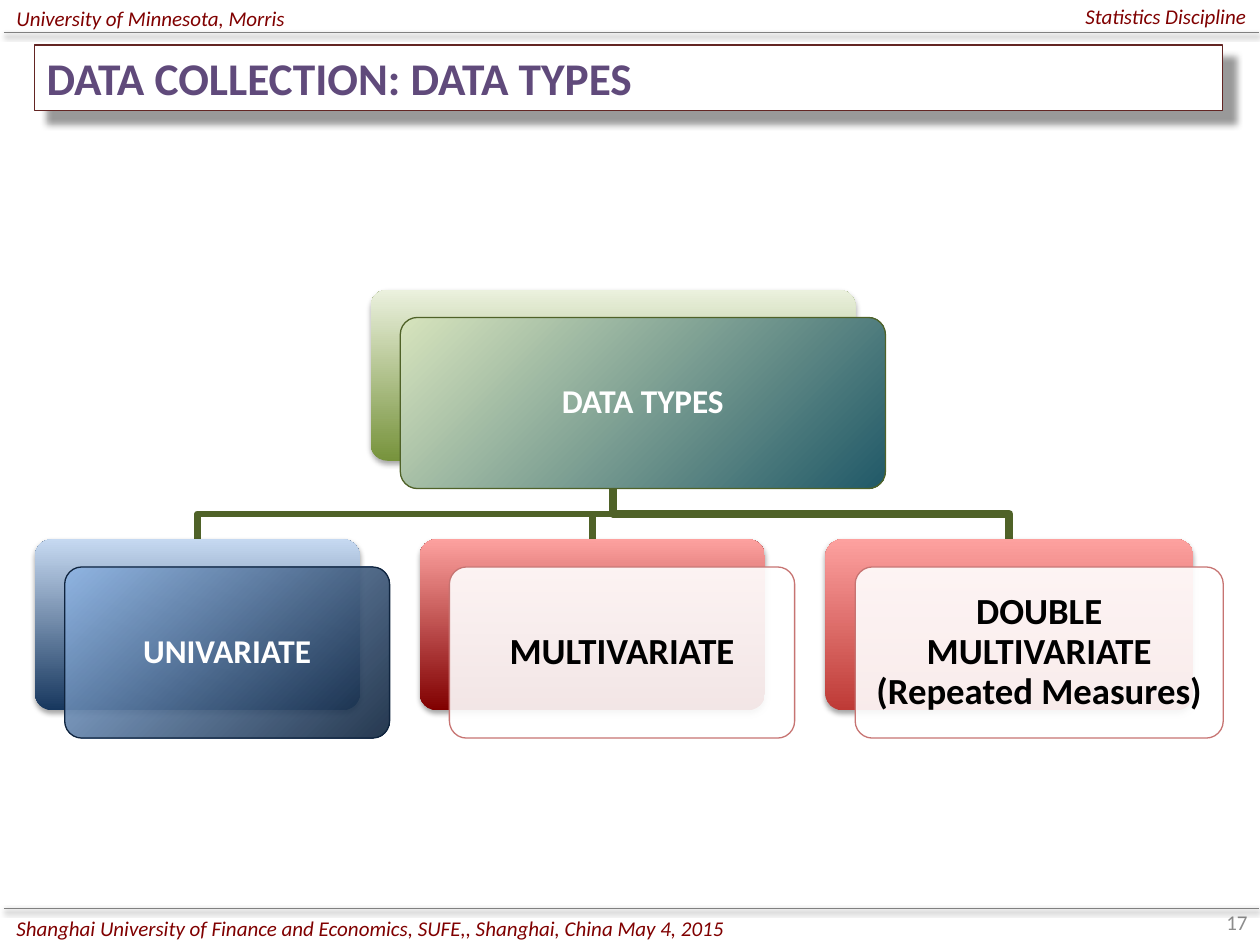
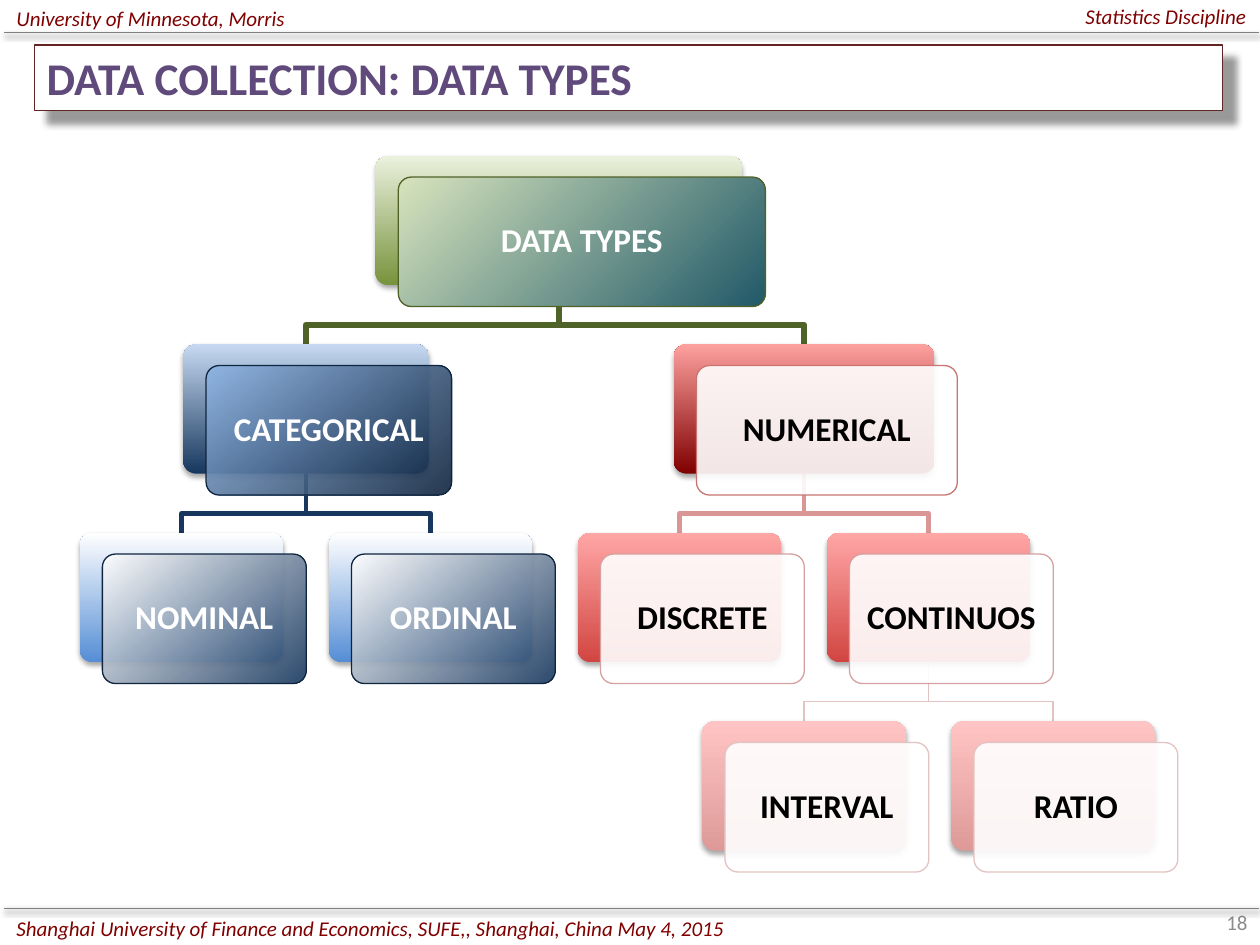
"""Builds two slides of data type trees that share one header, title and footer."""
from dataclasses import dataclass, field

import pptx
import pptx.dml.color
import pptx.enum.shapes
import pptx.enum.text
import pptx.oxml
import pptx.oxml.ns
import pptx.util

Cm = pptx.util.Cm
Pt = pptx.util.Pt
LEFT = pptx.enum.text.PP_ALIGN.LEFT
RIGHT = pptx.enum.text.PP_ALIGN.RIGHT
CENTER = pptx.enum.text.PP_ALIGN.CENTER
SHAPES = pptx.enum.shapes.MSO_SHAPE


@dataclass(frozen=True)
class Tone:
    back: tuple
    front: tuple
    edge: str
    text: str
    opacity: int = 90


@dataclass(frozen=True)
class Branch:
    color: str
    weight: float


@dataclass(frozen=True)
class Shadow:
    opacity: int
    blur: float
    distance: float
    angle: int


@dataclass(frozen=True)
class Theme:
    font: str = "Calibri"
    white: str = "FFFFFF"
    black: str = "000000"
    rule: str = "808080"
    maroon: str = "800000"
    title: str = "604A7B"
    title_edge: str = "632523"
    number: str = "8C8C8C"
    small: float = 12
    heading: float = 25.9
    label: float = 19
    large_label: float = 21
    hairline: float = 0.75
    rule_shadow: Shadow = Shadow(38, 3.1, 1.6, 90)
    card_shadow: Shadow = Shadow(35, 3.1, 1.8, 90)
    title_shadow: Shadow = Shadow(40, 4, 10, 45)
    green: Tone = Tone(("77933C", "EBF1DE"), ("215968", "D7E4BD"), "4F6228", "FFFFFF", 100)
    navy: Tone = Tone(("17375E", "C6D9F1"), ("0F243E", "8EB4E3"), "0F243E", "FFFFFF")
    sky: Tone = Tone(("558ED5", "FFFFFF"), ("17375E", "FFFFFF"), "0F243E", "FFFFFF")
    crimson: Tone = Tone(("800000", "FDA19F"), ("FFFFFF",), "C77472", "000000")
    red: Tone = Tone(("BE3A36", "FDA19F"), ("FFFFFF",), "C77472", "000000")
    coral: Tone = Tone(("D14541", "FFA7A6"), ("FFFFFF",), "D5A1A0", "000000")
    rose: Tone = Tone(("DD9A99", "FFC4C3"), ("FFFFFF",), "E2C2C2", "000000")
    green_branch: Branch = Branch("4F6228", 3.75)
    heavy_branch: Branch = Branch("4F6228", 4.5)
    navy_branch: Branch = Branch("17375E", 2.5)
    rose_branch: Branch = Branch("D99694", 2.5)
    pale_branch: Branch = Branch("E2C2C2", 0.75)


THEME = Theme()


@dataclass
class Node:
    label: str
    center: float
    width: float
    tone: Tone
    branch: Branch = None
    size: float = THEME.label
    children: list = field(default_factory=list)


@dataclass(frozen=True)
class Layout:
    top: float
    pitch: float
    height: float
    shift_x: float
    shift_y: float
    bend: float

    def level_top(self, level):
        return self.top + level * self.pitch


def rgb(color):
    return pptx.dml.color.RGBColor.from_string(color)


def drawing(tag, content="", **attributes):
    pairs = " ".join(f'{name}="{value}"' for name, value in attributes.items())
    namespace = pptx.oxml.ns.nsdecls("a")
    return pptx.oxml.parse_xml(f"<a:{tag} {namespace} {pairs}>{content}</a:{tag}>")


class Deck:
    def __init__(self, theme):
        self.theme = theme
        self.presentation = pptx.Presentation()
        self.presentation.slide_width = Cm(25.4)
        self.presentation.slide_height = Cm(19.05)
        self.slide = None

    def start_slide(self, number):
        theme = self.theme
        self.slide = self.presentation.slides.add_slide(self.presentation.slide_layouts[6])
        self.note(str(number), 19.48, 18.08, 5.92, 1.02, RIGHT, theme.number, italic=False)
        self.note("University of Minnesota, Morris", 0.08, -0.15, 11.63, 1.02)
        self.note("Statistics Discipline", 13.74, -0.18, 11.63, 1.02, RIGHT)
        for height in (18.31, 0.66):
            self.rule(height)

    def finish_slide(self, title):
        self.title(title)
        self.note("Shanghai University of Finance and Economics, SUFE,, "
                  "Shanghai, China May 4, 2015", 0.08, 18.31, 14.78, 0.79)

    def set_text(self, shape, text, size, color, align, bold=False, italic=False):
        frame = shape.text_frame
        frame.word_wrap = True
        frame.vertical_anchor = pptx.enum.text.MSO_ANCHOR.MIDDLE
        paragraph = frame.paragraphs[0]
        paragraph.text = text
        paragraph.alignment = align
        font = paragraph.font
        font.name, font.size = self.theme.font, Pt(size)
        font.bold, font.italic = bold, italic
        font.color.rgb = rgb(color)
        return paragraph

    def note(self, text, left, top, width, height, align=LEFT, color=None, italic=True):
        box = self.slide.shapes.add_textbox(Cm(left), Cm(top), Cm(width), Cm(height))
        self.set_text(box, text, self.theme.small, color or self.theme.maroon, align, italic=italic)

    def cast(self, properties, shadow):
        tint = f'<a:srgbClr val="{self.theme.black}"><a:alpha val="{shadow.opacity * 1000}"/></a:srgbClr>'
        effects = drawing("effectLst")
        effects.append(drawing("outerShdw", tint, blurRad=Pt(shadow.blur), dist=Pt(shadow.distance),
                               dir=shadow.angle * 60000, algn="tl", rotWithShape=0))
        properties.append(effects)

    def rule(self, height):
        line = self.slide.shapes.add_connector(
            pptx.enum.shapes.MSO_CONNECTOR.STRAIGHT, Cm(0.08), Cm(height), Cm(25.37), Cm(height))
        line.line.color.rgb = rgb(self.theme.rule)
        line.line.width = Pt(self.theme.hairline)
        self.cast(line.element.spPr, self.theme.rule_shadow)

    def panel(self, kind, left, top, width, height, edge=None, shadow=None):
        shape = self.slide.shapes.add_shape(kind, Cm(left), Cm(top), Cm(width), Cm(height))
        shape.fill.solid()
        shape.fill.fore_color.rgb = rgb(self.theme.white)
        if edge:
            shape.line.color.rgb = rgb(edge)
            shape.line.width = Pt(self.theme.hairline)
        else:
            shape.line.fill.background()
        if shadow:
            self.cast(shape.element.spPr, shadow)
        else:
            shape.shadow.inherit = False
        return shape

    def title(self, text):
        banner = self.panel(SHAPES.RECTANGLE, 0.69, 0.91, 23.95, 1.32,
                            self.theme.title_edge, self.theme.title_shadow)
        self.set_text(banner, text, self.theme.heading, self.theme.title, LEFT, bold=True)

    def paint(self, shape, colors, direction, opacity=100):
        tints = [f'<a:srgbClr val="{color}"><a:alpha val="{opacity * 1000}"/></a:srgbClr>'
                 for color in colors]
        if len(tints) == 1:
            fill = drawing("solidFill", tints[0])
        else:
            stops = "".join(f'<a:gs pos="{place}">{tint}</a:gs>'
                            for place, tint in zip((0, 100000), tints))
            fill = drawing("gradFill", f"<a:gsLst>{stops}</a:gsLst>{direction}", rotWithShape=1)
        properties = shape.element.spPr
        properties.replace(properties.find(pptx.oxml.ns.qn("a:solidFill")), fill)

    def card(self, node, layout, level):
        left, top = node.center - node.width / 2, layout.level_top(level)
        back = self.panel(SHAPES.ROUNDED_RECTANGLE, left, top, node.width, layout.height,
                          shadow=self.theme.card_shadow)
        self.paint(back, node.tone.back, '<a:lin ang="16200000" scaled="0"/>')
        front = self.panel(SHAPES.ROUNDED_RECTANGLE, left + layout.shift_x, top + layout.shift_y,
                           node.width, layout.height, node.tone.edge)
        self.paint(front, node.tone.front,
                   '<a:path path="circle"><a:fillToRect l="100000" t="100000"/></a:path>',
                   node.tone.opacity)
        for shape in (back, front):
            shape.adjustments[0] = 0.1
        frame = front.text_frame
        frame.margin_left = frame.margin_right = Cm(0.2)
        frame.margin_top = frame.margin_bottom = Cm(0.2)
        label = self.set_text(front, node.label, node.size, node.tone.text, CENTER, bold=True)
        label.line_spacing = 0.9

    def branch(self, parent, child, layout, level):
        end = layout.level_top(level + 1)
        start = layout.level_top(level) + layout.height
        bend = end - layout.bend
        corners = [(parent.center, bend), (child.center, bend), (child.center, end)]
        outline = self.slide.shapes.build_freeform(Cm(parent.center), Cm(start))
        outline.add_line_segments([(Cm(x), Cm(y)) for x, y in corners], close=False)
        elbow = outline.convert_to_shape()
        elbow.fill.background()
        elbow.line.color.rgb = rgb(child.branch.color)
        elbow.line.width = Pt(child.branch.weight)
        elbow.shadow.inherit = False

    def branches(self, node, layout, level=0):
        for child in reversed(node.children):
            self.branches(child, layout, level + 1)
            self.branch(node, child, layout, level)

    def cards(self, node, layout, level=0):
        self.card(node, layout, level)
        for child in node.children:
            self.cards(child, layout, level + 1)

    def tree(self, number, title, root, layout):
        self.start_slide(number)
        self.branches(root, layout)
        self.cards(root, layout)
        self.finish_slide(title)


def column(index):
    return 3.66 + 2.51 * index


def variable_counts(theme):
    return Node("DATA TYPES", 12.36, 9.78, theme.green, children=[
        Node("UNIVARIATE", 3.98, 6.55, theme.navy, theme.green_branch),
        Node("MULTIVARIATE", 11.94, 6.96, theme.crimson, theme.green_branch, theme.large_label),
        Node("DOUBLE MULTIVARIATE (Repeated Measures)", 20.35, 7.42, theme.red,
             theme.heavy_branch, theme.large_label),
    ])


def measurement_scales(theme):
    def leaf(label, index, tone, branch, children=()):
        return Node(label, column(index), 4.11, tone, branch, children=list(children))

    categorical = Node("CATEGORICAL", column(1), 4.95, theme.navy, theme.green_branch, children=[
        leaf("NOMINAL", 0, theme.sky, theme.navy_branch),
        leaf("ORDINAL", 2, theme.sky, theme.navy_branch),
    ])
    numerical = Node("NUMERICAL", column(5), 5.26, theme.crimson, theme.green_branch, children=[
        leaf("DISCRETE", 4, theme.coral, theme.rose_branch),
        leaf("CONTINUOS", 6, theme.coral, theme.rose_branch, [
            leaf("INTERVAL", 5, theme.rose, theme.pale_branch),
            leaf("RATIO", 7, theme.rose, theme.pale_branch),
        ]),
    ])
    return Node("DATA TYPES", 11.27, 7.4, theme.green, children=[categorical, numerical])


def main():
    deck = Deck(THEME)
    title = "DATA COLLECTION: DATA TYPES"
    deck.tree(17, title, variable_counts(THEME), Layout(5.84, 5.03, 3.45, 0.6, 0.56, 0.51))
    deck.tree(18, title, measurement_scales(THEME), Layout(3.14, 3.8, 2.61, 0.46, 0.43, 0.39))
    deck.presentation.save("out.pptx")


if __name__ == "__main__":
    main()
